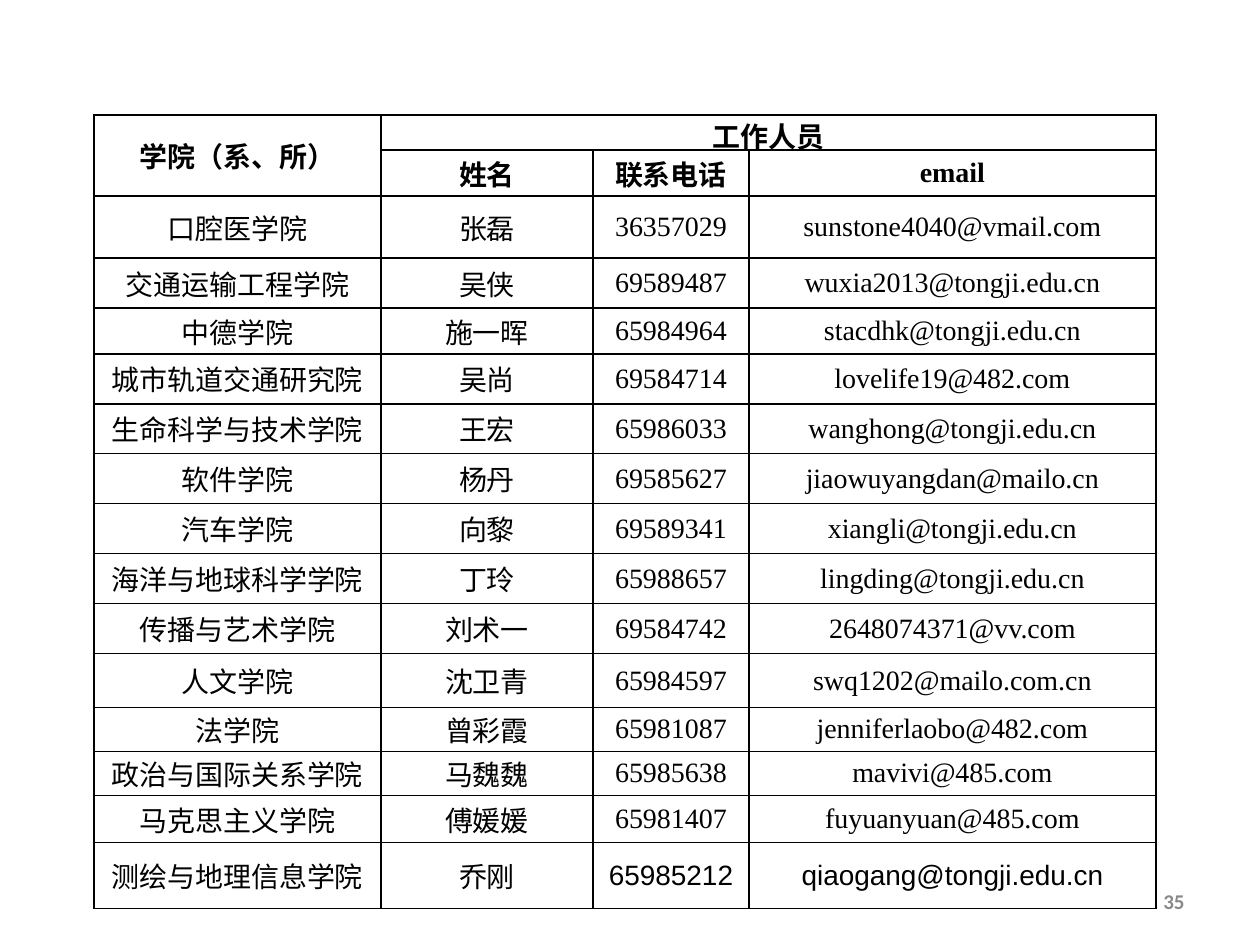
from pptx import Presentation
from pptx.dml.color import RGBColor
from pptx.enum.text import MSO_ANCHOR, PP_ALIGN
from pptx.oxml import parse_xml
from pptx.oxml.ns import nsdecls
from pptx.util import Emu, Pt

PIXELS_PER_INCH = 126
COLUMN_WIDTHS = [287, 212, 156, 407]
ROW_HEIGHTS = [35, 46, 62, 50, 46, 50, 50, 50, 50, 50, 50, 54, 44, 44, 47, 66]
HEADER_OVERHANG = 6
HEADER_ROWS = [
    ("学院（系、所）", "工作人员", "", ""),
    ("", "姓名", "联系电话", "email"),
]
STAFF_ROWS = [
    ("口腔医学院", "张磊", "36357029", "sunstone4040@vmail.com"),
    ("交通运输工程学院", "吴侠", "69589487", "wuxia2013@tongji.edu.cn"),
    ("中德学院", "施一晖", "65984964", "stacdhk@tongji.edu.cn"),
    ("城市轨道交通研究院", "吴尚", "69584714", "lovelife19@482.com"),
    ("生命科学与技术学院", "王宏", "65986033", "wanghong@tongji.edu.cn"),
    ("软件学院", "杨丹", "69585627", "jiaowuyangdan@mailo.cn"),
    ("汽车学院", "向黎", "69589341", "xiangli@tongji.edu.cn"),
    ("海洋与地球科学学院", "丁玲", "65988657", "lingding@tongji.edu.cn"),
    ("传播与艺术学院", "刘术一", "69584742", "2648074371@vv.com"),
    ("人文学院", "沈卫青", "65984597", "swq1202@mailo.com.cn"),
    ("法学院", "曾彩霞", "65981087", "jenniferlaobo@482.com"),
    ("政治与国际关系学院", "马魏魏", "65985638", "mavivi@485.com"),
    ("马克思主义学院", "傅媛媛", "65981407", "fuyuanyuan@485.com"),
    ("测绘与地理信息学院", "乔刚", "65985212", "qiaogang@tongji.edu.cn"),
]


def px(length):
    return Emu(round(length * 914400 / PIXELS_PER_INCH))


def color(value):
    return RGBColor.from_string(value)


def write_text(frame, text, *, font, size, fill, bold=False, align=PP_ALIGN.CENTER):
    paragraph = frame.paragraphs[0]
    paragraph.alignment = align
    paragraph.font.size = Pt(size)
    run = paragraph.add_run()
    run.text = text
    run.font.name = font
    run.font.size = Pt(size)
    run.font.bold = bold
    run.font.color.rgb = color(fill)


class SlideBuilder:
    ink = "000000"
    muted = "898989"
    table_font = "Times New Roman"
    accent_font = "Arial"
    number_font = "Calibri"

    def __init__(self, slide):
        self.slide = slide

    def border_cell(self, cell):
        properties = cell._tc.get_or_add_tcPr()
        for position, side in enumerate(("lnL", "lnR", "lnT", "lnB")):
            properties.insert(position, parse_xml(
                f'<a:{side} {nsdecls("a")} w="{Pt(1)}"><a:solidFill>'
                f'<a:srgbClr val="{self.ink}"/></a:solidFill></a:{side}>'
            ))

    def add_staff_table(self, left, top):
        rows = HEADER_ROWS + STAFF_ROWS
        shape = self.slide.shapes.add_table(
            len(rows), len(COLUMN_WIDTHS), px(left), px(top),
            px(sum(COLUMN_WIDTHS)), px(sum(ROW_HEIGHTS)))
        table = shape.table
        table.first_row = False
        table.horz_banding = False
        for column, width in zip(table.columns, COLUMN_WIDTHS):
            column.width = px(width)
        for row, height in zip(table.rows, ROW_HEIGHTS):
            row.height = px(height)
        table.cell(0, 0).merge(table.cell(1, 0))
        table.cell(0, 1).merge(table.cell(0, 3))
        for row_index, values in enumerate(rows):
            is_last = row_index == len(rows) - 1
            for column_index, text in enumerate(values):
                cell = table.cell(row_index, column_index)
                cell.fill.background()
                cell.vertical_anchor = MSO_ANCHOR.MIDDLE
                cell.margin_left = cell.margin_right = 0
                cell.margin_top = cell.margin_bottom = 0
                if row_index == 0 and column_index > 0:
                    cell.margin_bottom = px(-HEADER_OVERHANG)
                self.border_cell(cell)
                if text:
                    write_text(cell.text_frame, text, size=16, fill=self.ink,
                               font=self.accent_font if is_last else self.table_font,
                               bold=row_index < len(HEADER_ROWS))

    def add_slide_number(self, text, left, top, width, height):
        shape = self.slide.shapes.add_textbox(px(left), px(top), px(width), px(height))
        frame = shape.text_frame
        frame.word_wrap = True
        frame.vertical_anchor = MSO_ANCHOR.MIDDLE
        write_text(frame, text, font=self.number_font, size=12, fill=self.muted,
                   bold=True, align=PP_ALIGN.RIGHT)


def main():
    presentation = Presentation()
    presentation.slide_width = px(1260)
    presentation.slide_height = px(945)
    builder = SlideBuilder(presentation.slides.add_slide(presentation.slide_layouts[6]))
    builder.add_staff_table(94, 115)
    builder.add_slide_number("35", 903, 876, 294, 50)
    presentation.save("out.pptx")


if __name__ == "__main__":
    main()
